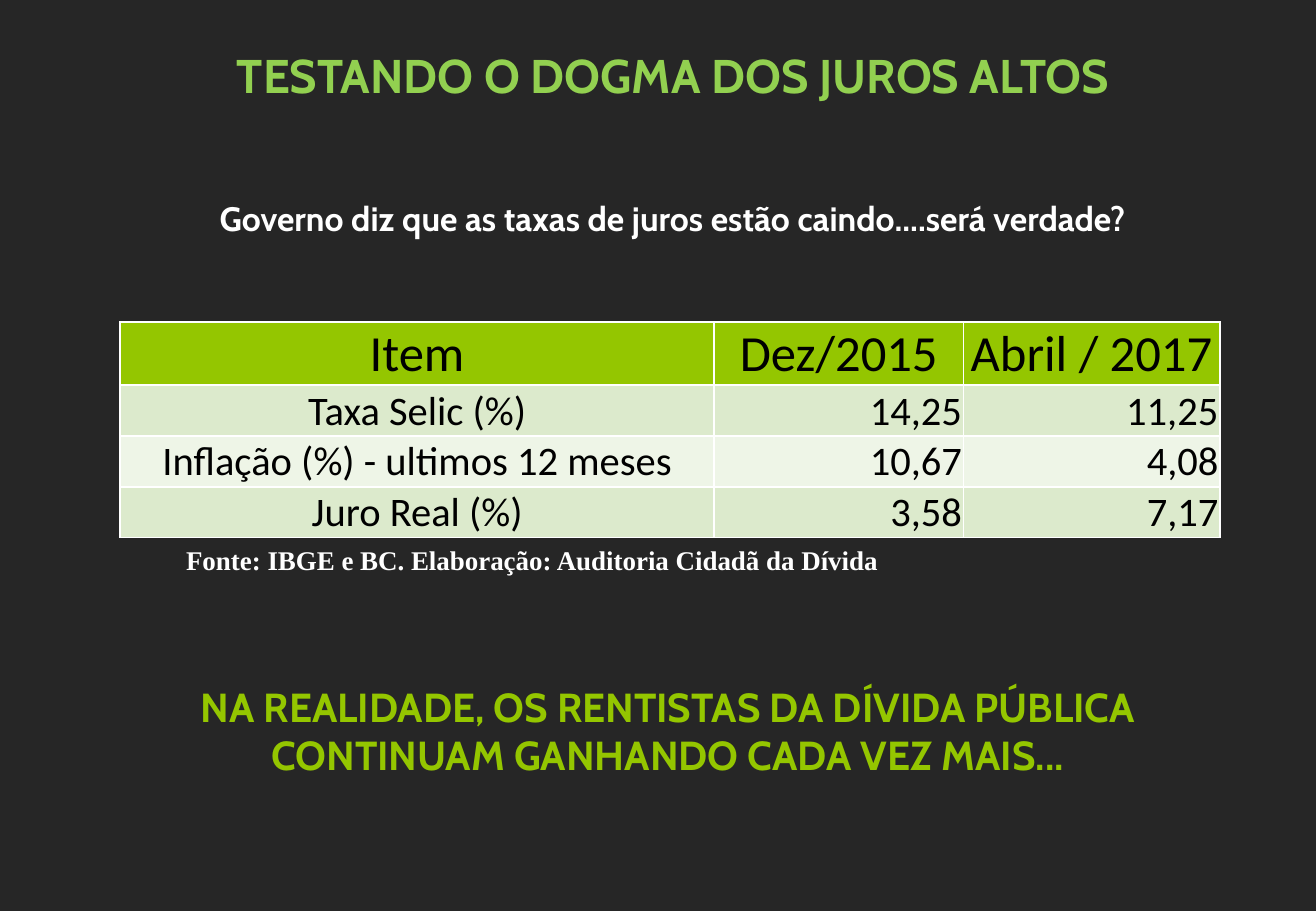
"""Build the slide that tests the dogma of high interest rates."""
from dataclasses import dataclass

from lxml.etree import SubElement
from pptx import Presentation
from pptx.dml.color import RGBColor as Color
from pptx.enum.text import MSO_ANCHOR as Anchor, MSO_AUTO_SIZE as AutoSize, PP_ALIGN as Align
from pptx.oxml.ns import qn
from pptx.util import Cm, Pt


@dataclass(frozen=True)
class Theme:
    background: str = "262626"
    title: str = "92D050"
    accent: str = "94C600"
    light: str = "FFFFFF"
    dark: str = "000000"
    bands: tuple = ("DCEACC", "EEF5E7")
    heading_font: str = "Cabin"
    table_font: str = "Calibri"
    source_font: str = "Times New Roman"
    title_size: int = 28
    question_size: int = 20
    source_size: int = 16
    closing_size: int = 24
    header_size: int = 30
    cell_size: int = 24


theme = Theme()


def write(frame, text, *, size, color, font=theme.heading_font, bold=True,
          align=Align.CENTER, anchor=Anchor.MIDDLE):
    """Write one formatted paragraph into a text frame."""
    frame.word_wrap = True
    frame.vertical_anchor = anchor
    para = frame.paragraphs[0]
    para.alignment = align
    para.space_before = Pt(0)
    span = para.add_run()
    span.text = text
    span.font.name = font
    span.font.size = Pt(size)
    span.font.bold = bold
    span.font.color.rgb = Color.from_string(color)
    return para


def place(box, left, top, width, height):
    """Move a box and clear its margins."""
    box.left, box.top, box.width, box.height = Cm(left), Cm(top), Cm(width), Cm(height)
    frame = box.text_frame
    frame.auto_size = AutoSize.NONE
    frame.margin_left = frame.margin_right = frame.margin_top = frame.margin_bottom = 0
    return frame


deck = Presentation()
deck.slide_width, deck.slide_height = Cm(27.51), Cm(19.05)
page = deck.slides.add_slide(deck.slide_layouts[1])
page.background.fill.solid()
page.background.fill.fore_color.rgb = Color.from_string(theme.background)

title = place(page.shapes.title, 0.58, 0.75, 26.97, 1.6)
write(title, "TESTANDO O DOGMA DOS JUROS ALTOS", size=theme.title_size, color=theme.title)

question = place(page.placeholders[1], 0.58, 3.96, 26.97, 1.2)
question_para = write(question, "Governo diz que as taxas de juros estão caindo....será verdade?",
                      size=theme.question_size, color=theme.light)
properties = question_para._p.get_or_add_pPr()
properties.set("marL", "0")
properties.set("indent", "0")
SubElement(properties, qn("a:buNone"))

rows = [
    ("Item", "Dez/2015", "Abril / 2017"),
    ("Taxa Selic (%)", "14,25", "11,25"),
    ("Inflação (%) - ultimos 12 meses", "10,67", "4,08"),
    ("Juro Real (%)", "3,58", "7,17"),
]
widths = (12.42, 5.21, 5.36)
heights = (1.31, 1.05, 1.05, 1.05)
table = page.shapes.add_table(len(rows), len(widths), Cm(2.51), Cm(6.73),
                              Cm(sum(widths)), Cm(sum(heights))).table
for column, width in zip(table.columns, widths):
    column.width = Cm(width)
for row, height in zip(table.rows, heights):
    row.height = Cm(height)

for row_index, values in enumerate(rows):
    header = row_index == 0
    fill = theme.accent if header else theme.bands[(row_index - 1) % 2]
    for column_index, value in enumerate(values):
        cell = table.cell(row_index, column_index)
        cell.margin_left = cell.margin_right = cell.margin_top = Cm(0.03)
        cell.margin_bottom = 0
        cell.vertical_anchor = Anchor.MIDDLE if header else Anchor.BOTTOM
        write(cell.text_frame, value, font=theme.table_font, bold=False, color=theme.dark,
              size=theme.header_size if header else theme.cell_size, anchor=None,
              align=Align.CENTER if header or column_index == 0 else Align.RIGHT)
        cell_properties = cell._tc.get_or_add_tcPr()
        for side in ("a:lnL", "a:lnR", "a:lnT", "a:lnB"):
            border = SubElement(cell_properties, qn(side), w=str(Pt(1)))
            SubElement(SubElement(border, qn("a:solidFill")), qn("a:srgbClr"), val=theme.light)
        cell.fill.solid()
        cell.fill.fore_color.rgb = Color.from_string(fill)

source = place(page.shapes.add_textbox(0, 0, 0, 0), 3.89, 11.2, 20, 1)
write(source, "Fonte: IBGE e BC. Elaboração: Auditoria Cidadã da Dívida", font=theme.source_font,
      size=theme.source_size, color=theme.light, align=Align.LEFT)

closing = place(page.shapes.add_textbox(0, 0, 0, 0), 1.96, 14.12, 24, 2.31)
write(closing, "NA REALIDADE, OS RENTISTAS DA DÍVIDA PÚBLICA CONTINUAM GANHANDO CADA VEZ MAIS...",
      size=theme.closing_size, color=theme.accent)

deck.save("out.pptx")
